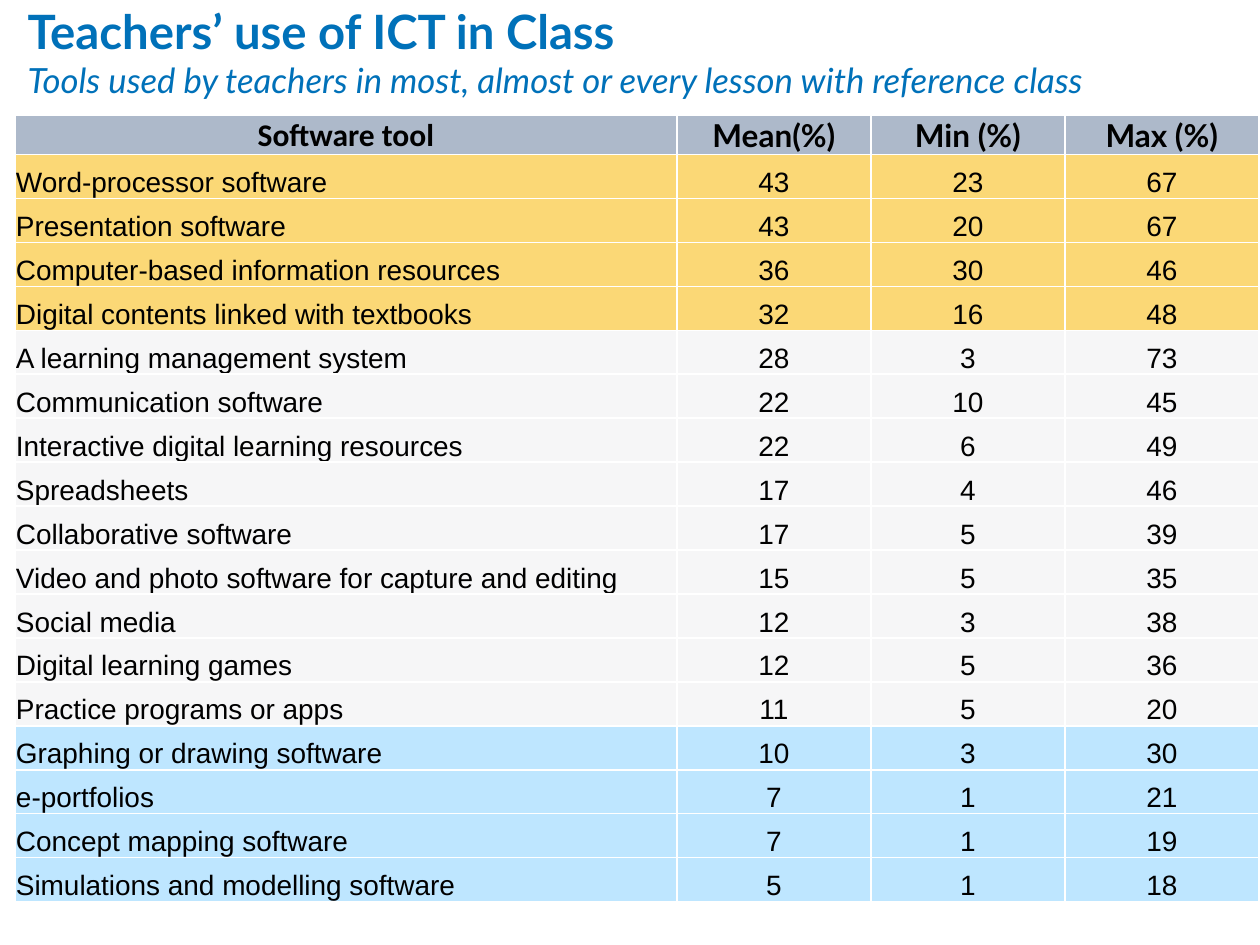
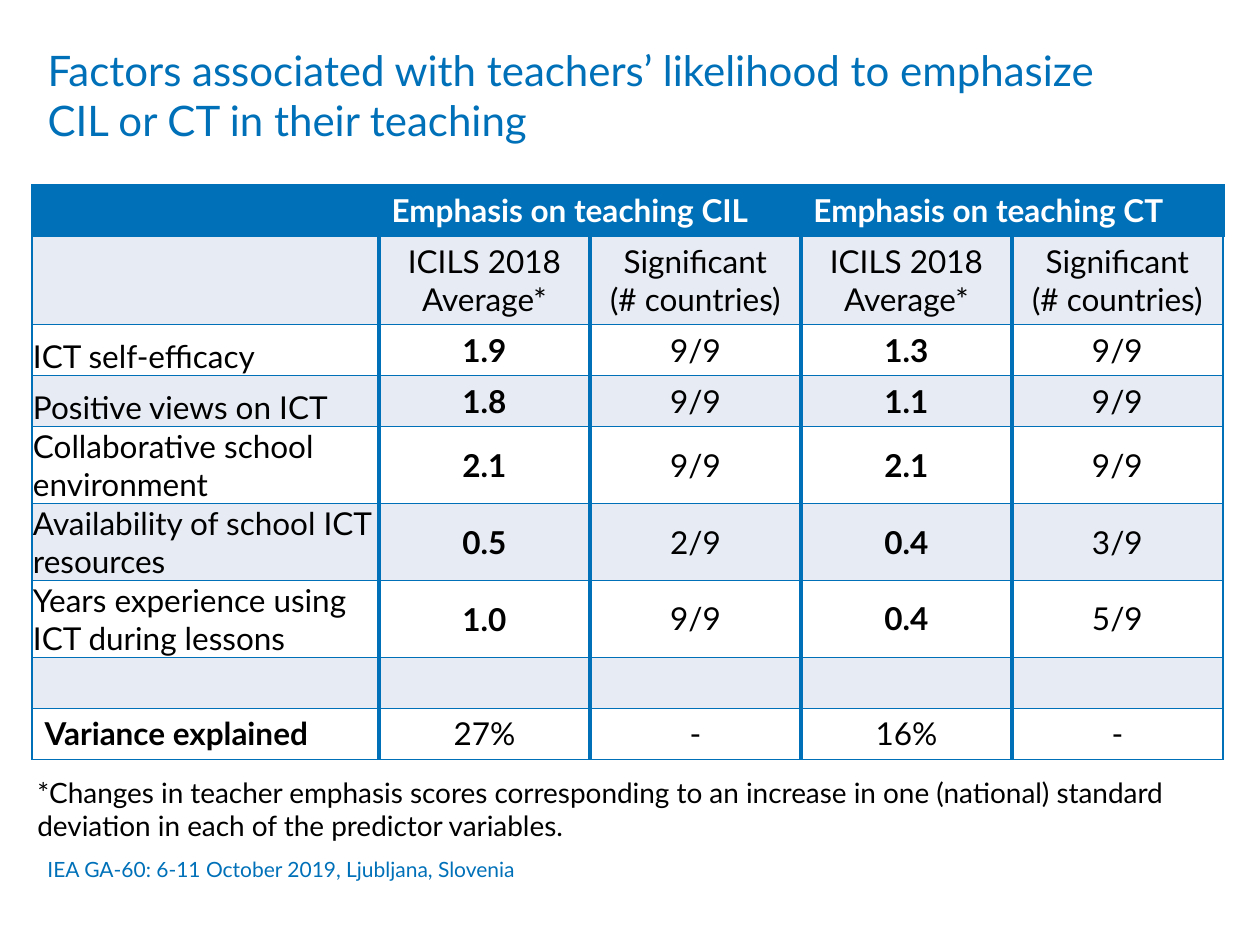
"""Build two slides of tables on teachers' use of ICT in class."""
import pptx
import pptx.dml.color
import pptx.enum.text
import pptx.oxml
import pptx.oxml.ns
import pptx.util

PX = 914400 // 126
BLUE, BLACK, WHITE = "0071B9", "000000", "FFFFFF"
LEFT = pptx.enum.text.PP_ALIGN.LEFT
CENTER = pptx.enum.text.PP_ALIGN.CENTER
TOP = pptx.enum.text.MSO_ANCHOR.TOP
MIDDLE = pptx.enum.text.MSO_ANCHOR.MIDDLE
BOTTOM = pptx.enum.text.MSO_ANCHOR.BOTTOM
colour = pptx.dml.color.RGBColor.from_string


def write(paragraph, text, size=18, font="Lato", color=BLACK, bold=False, italic=False, align=LEFT):
    paragraph.alignment = align
    run = paragraph.add_run()
    run.text = text
    run.font.size = pptx.util.Pt(size)
    run.font.name = font
    run.font.bold = bold
    run.font.italic = italic
    run.font.color.rgb = colour(color)


def style_cell(cell, fill, line, widths, anchor, tight):
    properties = cell._tc.get_or_add_tcPr()
    for side, width in zip("LRTB", widths):
        properties.append(pptx.oxml.parse_xml(
            f'<a:ln{side} {pptx.oxml.ns.nsdecls("a")} w="{pptx.util.Pt(width)}">'
            f'<a:solidFill><a:srgbClr val="{line}"/></a:solidFill></a:ln{side}>'))
    cell.fill.solid()
    cell.fill.fore_color.rgb = colour(fill)
    cell.vertical_anchor = anchor
    if tight:
        cell.margin_left = cell.margin_right = cell.margin_top = PX
        cell.margin_bottom = 0


presentation = pptx.Presentation()
presentation.slide_width = 1260 * PX
presentation.slide_height = 945 * PX
title_only = presentation.slide_layouts[5]

tool_rows = [
    ("Software tool", "Mean(%)", "Min (%)", "Max (%)"),
    ("Word-processor software", 43, 23, 67),
    ("Presentation software", 43, 20, 67),
    ("Computer-based information resources", 36, 30, 46),
    ("Digital contents linked with textbooks", 32, 16, 48),
    ("A learning management system", 28, 3, 73),
    ("Communication software", 22, 10, 45),
    ("Interactive digital learning resources", 22, 6, 49),
    ("Spreadsheets", 17, 4, 46),
    ("Collaborative software", 17, 5, 39),
    ("Video and photo software for capture and editing", 15, 5, 35),
    ("Social media", 12, 3, 38),
    ("Digital learning games", 12, 5, 36),
    ("Practice programs or apps", 11, 5, 20),
    ("Graphing or drawing software", 10, 3, 30),
    ("e-portfolios", 7, 1, 21),
    ("Concept mapping software", 7, 1, 19),
    ("Simulations and modelling software", 5, 1, 18),
]
factor_rows = [
    ("", "Emphasis on teaching CIL", "", "Emphasis on teaching CT", ""),
    ("",) + ("ICILS 2018 Average*", "Significant\n(# countries)") * 2,
    ("ICT self-efficacy", "1.9", "9/9", "1.3", "9/9"),
    ("Positive views on ICT", "1.8", "9/9", "1.1", "9/9"),
    ("Collaborative school environment", "2.1", "9/9", "2.1", "9/9"),
    ("Availability of school ICT resources", "0.5", "2/9", "0.4", "3/9"),
    ("Years experience using ICT during lessons", "1.0", "9/9", "0.4", "5/9"),
    ("",) * 5,
    ("Variance explained", "27%", "-", "16%", "-"),
]
layouts = [
    ((15, -4, 1191, 87), (15, 115), (662, 194, 194, 194), [39] + [44] * 17),
    ((35, 38, 1101, 87), (32, 185), (347, 211, 211, 211, 211), [51, 88, 51, 51, 77, 77, 77, 51, 51]),
]

slides, titles, tables = [], [], []
for title_box, (left, top), column_widths, row_heights in layouts:
    slide = presentation.slides.add_slide(title_only)
    title = slide.shapes.title
    title.left, title.top, title.width, title.height = [length * PX for length in title_box]
    title.text_frame.auto_size = pptx.enum.text.MSO_AUTO_SIZE.NONE
    title.text_frame.vertical_anchor = TOP
    table = slide.shapes.add_table(
        len(row_heights), len(column_widths), left * PX, top * PX,
        sum(column_widths) * PX, sum(row_heights) * PX).table
    table.first_row = table.horz_banding = False
    for column, width in zip(table.columns, column_widths):
        column.width = width * PX
    for row, height in zip(table.rows, row_heights):
        row.height = height * PX
    slides.append(slide)
    titles.append(title.text_frame.paragraphs[0])
    tables.append(table)

write(titles[0], "Teachers’ use of ICT in Class", size=27, color=BLUE, bold=True)
titles[0].add_line_break()
write(titles[0], "Tools used by teachers in most, almost or every lesson with reference class",
      size=19.8, color=BLUE, italic=True)
write(titles[1], "Factors associated with teachers’ likelihood to emphasize CIL or CT in their teaching",
      size=24, color=BLUE)

tool_fills = ["ADB9CA"] + ["FBD876"] * 4 + ["F6F6F7"] * 9 + ["BEE6FF"] * 4
for row, (values, fill) in enumerate(zip(tool_rows, tool_fills)):
    for column, value in enumerate(values):
        cell = tables[0].cell(row, column)
        style_cell(cell, fill, WHITE, (1, 1, 1, 1), BOTTOM, tight=True)
        header = row == 0
        write(cell.text_frame.paragraphs[0], str(value), size=18 if header else 16,
              font="Arial" if not header else "Lato" if column else "Calibri",
              bold=header, align=CENTER if header or column else LEFT)

for row, values in enumerate(factor_rows):
    fill = BLUE if row == 0 else "E7EBF3" if row % 2 else WHITE
    predictor = 2 <= row <= 6
    for column, value in enumerate(values):
        cell = tables[1].cell(row, column)
        widths = (2.25 if column else 1, 2.25 if column < 4 else 1, 1, 1)
        anchor = TOP if not predictor else MIDDLE if column else BOTTOM
        style_cell(cell, fill, BLUE, widths, anchor, tight=predictor and column < 2)
        average = predictor and column in (1, 3)
        for index, line in enumerate(value.split("\n") if value else []):
            frame = cell.text_frame
            paragraph = frame.add_paragraph() if index else frame.paragraphs[0]
            write(paragraph, line, color=BLACK if row else WHITE,
                  bold=row == 0 or average or line == "Variance explained",
                  align=CENTER if row and column else LEFT)
for column in (1, 3):
    tables[1].cell(0, column).merge(tables[1].cell(0, column + 1))

captions = [
    ((25, 769, 1197, 81), TOP, 16, BLACK,
     "*Changes in teacher emphasis scores corresponding to an increase in one (national) "
     "standard deviation in each of the predictor variables."),
    ((35, 835, 615, 53), BOTTOM, 12, BLUE, "IEA GA-60: 6-11 October 2019, Ljubljana, Slovenia"),
]
for box, anchor, size, color, text in captions:
    frame = slides[1].shapes.add_textbox(*[length * PX for length in box]).text_frame
    frame.word_wrap = True
    frame.vertical_anchor = anchor
    write(frame.paragraphs[0], text, size=size, color=color)

presentation.save("out.pptx")
